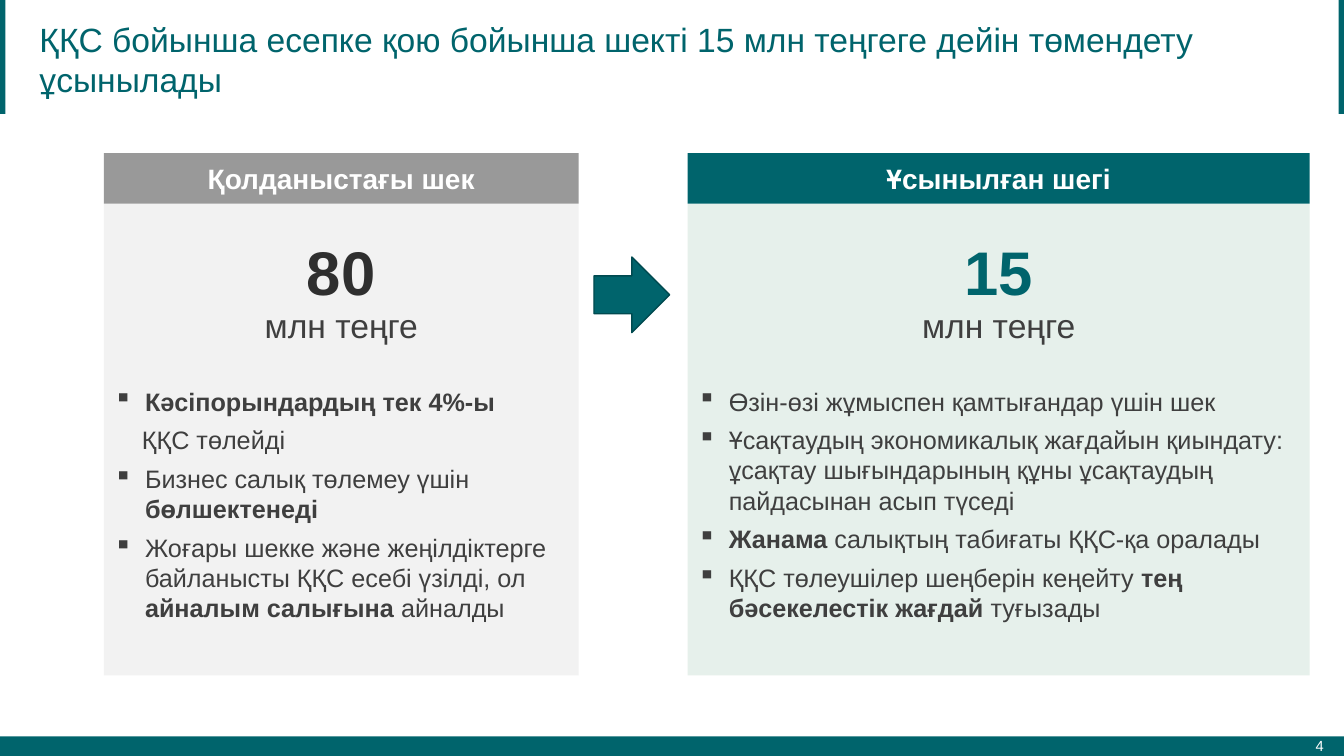
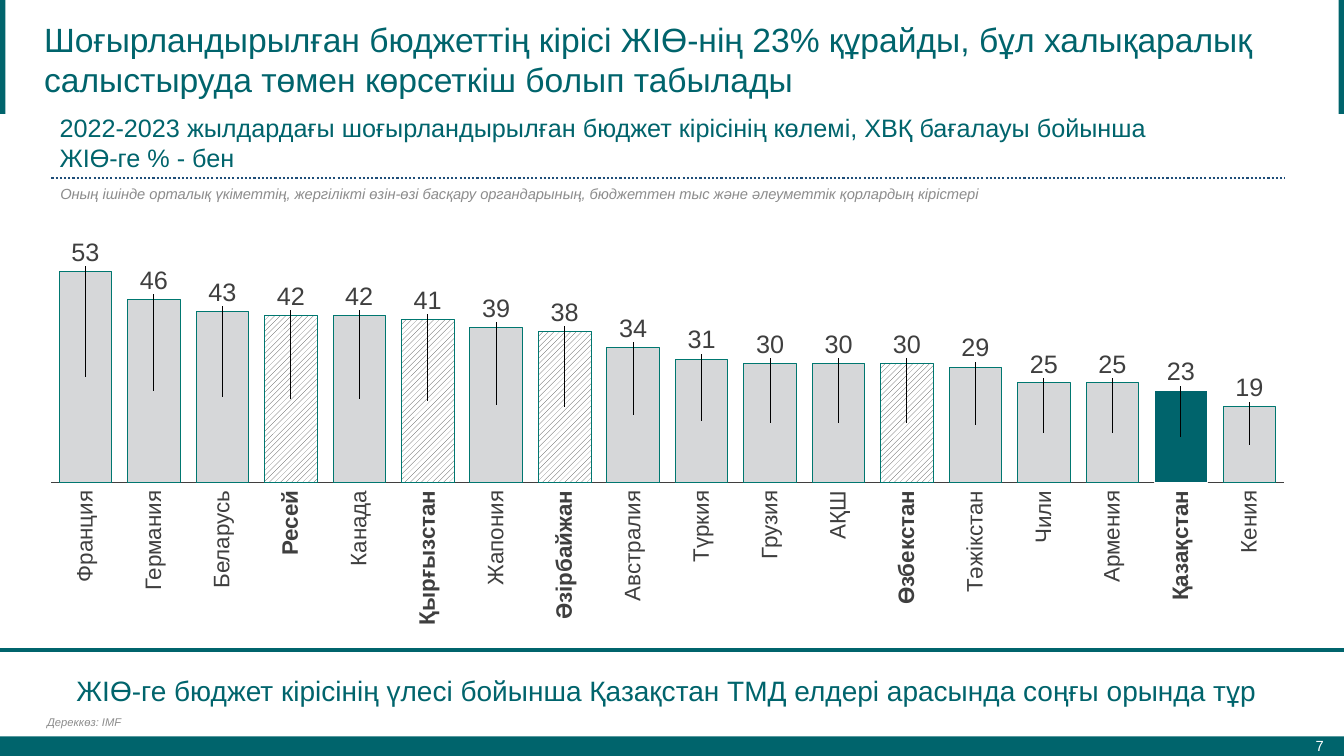
from dataclasses import dataclass

from lxml import etree
from pptx import Presentation
from pptx.chart.data import CategoryChartData
from pptx.dml.color import RGBColor
from pptx.enum.chart import XL_CHART_TYPE, XL_TICK_LABEL_POSITION, XL_TICK_MARK
from pptx.enum.dml import MSO_LINE, MSO_PATTERN
from pptx.enum.shapes import MSO_CONNECTOR, MSO_SHAPE
from pptx.enum.text import MSO_ANCHOR, PP_ALIGN
from pptx.oxml import parse_xml
from pptx.oxml.ns import nsdecls, qn
from pptx.util import Inches, Pt

TEAL = RGBColor(0x00, 0x64, 0x6C)
DARK_TEAL = RGBColor(0x00, 0x4A, 0x50)
BAR_OUTLINE = RGBColor(0x00, 0x77, 0x70)
PALE_GREEN = RGBColor(0xE6, 0xF0, 0xEB)
NAVY = RGBColor(0x1F, 0x4E, 0x79)
INK = RGBColor(0x3F, 0x3F, 0x3F)
BLACK = RGBColor(0x2F, 0x2F, 0x2F)
GREY = RGBColor(0x99, 0x99, 0x99)
NOTE_GREY = RGBColor(0x8C, 0x8C, 0x8C)
BAR_GREY = RGBColor(0xD6, 0xD7, 0xD9)
PALE_GREY = RGBColor(0xF2, 0xF2, 0xF2)
WHITE = RGBColor(0xFF, 0xFF, 0xFF)

FONT = "Arial"
LEFT, CENTER, RIGHT = PP_ALIGN.LEFT, PP_ALIGN.CENTER, PP_ALIGN.RIGHT
TOP, MIDDLE, BOTTOM = MSO_ANCHOR.TOP, MSO_ANCHOR.MIDDLE, MSO_ANCHOR.BOTTOM
RECTANGLE, RIGHT_ARROW = MSO_SHAPE.RECTANGLE, MSO_SHAPE.RIGHT_ARROW
STRAIGHT, DOTTED = MSO_CONNECTOR.STRAIGHT, MSO_LINE.ROUND_DOT
STACKED_COLUMNS = XL_CHART_TYPE.COLUMN_STACKED
NO_TICK_LABELS, NO_TICKS = XL_TICK_LABEL_POSITION.NONE, XL_TICK_MARK.NONE
HATCHING = MSO_PATTERN.WIDE_UPWARD_DIAGONAL
WIDE_MARGINS = (0.1, 0.05)
NO_MARGINS = (0, 0)


@dataclass
class Box:
    """A region in inches; region() takes percentages of it."""
    left: float
    top: float
    width: float
    height: float

    def region(self, left, top, width, height):
        return Box(self.left + self.width * left / 100, self.top + self.height * top / 100,
                   self.width * width / 100, self.height * height / 100)

    def lengths(self):
        return [Inches(value) for value in (self.left, self.top, self.width, self.height)]


PAGE = Box(0, 0, 13.33, 7.5)

# Bullet paragraphs: (bulleted, [(text, bold), ...])
CURRENT_POINTS = [
    (True, [("Кәсіпорындардың тек 4%-ы", True)]),
    (False, [("ҚҚС төлейді", False)]),
    (True, [("Бизнес салық төлемеу үшін ", False), ("бөлшектенеді", True)]),
    (True, [("Жоғары шекке және жеңілдіктерге байланысты ҚҚС есебі үзілді, ол ", False),
            ("айналым салығына ", True), ("айналды", False)]),
]
PROPOSED_POINTS = [
    (True, [("Өзін-өзі жұмыспен қамтығандар үшін шек", False)]),
    (True, [("Ұсақтаудың экономикалық жағдайын қиындату: ұсақтау шығындарының құны "
             "ұсақтаудың пайдасынан асып түседі", False)]),
    (True, [("Жанама ", True), ("салықтың табиғаты ҚҚС-қа оралады", False)]),
    (True, [("ҚҚС төлеушілер шеңберін кеңейту ", False),
            ("тең бәсекелестік жағдай ", True), ("туғызады", False)]),
]

REVENUES = {
    "Франция": 53, "Германия": 46, "Беларусь": 43, "Ресей": 42, "Канада": 42,
    "Қырғызстан": 41, "Жапония": 39, "Әзірбайжан": 38, "Австралия": 34, "Түркия": 31,
    "Грузия": 30, "АҚШ": 30, "Өзбекстан": 30, "Тәжікстан": 29, "Чили": 25,
    "Армения": 25, "Қазақстан": 23, "Кения": 19,
}
HATCHED = {"Ресей", "Қырғызстан", "Әзірбайжан", "Өзбекстан"}
FOCUS = "Қазақстан"
PLOT = {"x": 0.007, "y": 0.191, "w": 0.985, "h": 0.672}
LABEL_LIFT = 0.06


def add_run(paragraph, text, size, color, bold=False, italic=False):
    run = paragraph.add_run()
    run.text = text
    font = run.font
    font.name, font.size, font.bold, font.italic = FONT, Pt(size), bold, italic
    font.color.rgb = color


def set_frame(shape, anchor=TOP, margins=WIDE_MARGINS):
    frame = shape.text_frame
    frame.word_wrap = True
    frame.vertical_anchor = anchor
    frame.margin_left = frame.margin_right = Inches(margins[0])
    frame.margin_top = frame.margin_bottom = Inches(margins[1])
    return frame


def add_text(slide, box, text, size, color, align=LEFT, anchor=TOP,
             margins=WIDE_MARGINS, bold=False, italic=False):
    frame = set_frame(slide.shapes.add_textbox(*box.lengths()), anchor, margins)
    paragraph = frame.paragraphs[0]
    paragraph.alignment = align
    add_run(paragraph, text, size, color, bold, italic)
    return frame


def add_block(slide, box, fill, kind=RECTANGLE, outline=None):
    shape = slide.shapes.add_shape(kind, *box.lengths())
    shape.shadow.inherit = False
    shape.fill.solid()
    shape.fill.fore_color.rgb = fill
    if outline is None:
        shape.line.fill.background()
    else:
        shape.line.color.rgb = outline
        shape.line.width = Pt(1)
    return shape


def add_rule(slide, box, color, width, dash=None):
    """Draw a horizontal line along the top of the box."""
    left, top, length, _ = box.lengths()
    line = slide.shapes.add_connector(STRAIGHT, left, top, left + length, top)
    line.line.color.rgb = color
    line.line.width = Pt(width)
    if dash is not None:
        line.line.dash_style = dash
    etree.SubElement(line.element.spPr, qn("a:effectLst"))


def add_page(presentation, title, number, title_left):
    slide = presentation.slides.add_slide(presentation.slide_layouts[6])
    add_block(slide, PAGE.region(0, 97.4, 100, 2.6), TEAL)
    add_text(slide, PAGE.region(89.4, 96, 9.7, 5.3), number, 10.5, WHITE,
             RIGHT, MIDDLE, (0.08, 0.04))
    for left in (0, 99.6):
        add_block(slide, PAGE.region(left, 0, 0.4, 15.07), TEAL)
    add_text(slide, PAGE.region(title_left, 2.67, 93.2, 10.27), title, 24, TEAL, anchor=MIDDLE)
    return slide


def add_points(slide, box, points):
    frame = set_frame(slide.shapes.add_textbox(*box.lengths()))
    for index, (bulleted, runs) in enumerate(points):
        paragraph = frame.add_paragraph() if index else frame.paragraphs[0]
        properties = paragraph._p.get_or_add_pPr()
        indent = Inches(0.31 if bulleted else 0.28)
        properties.set("marL", str(indent))
        if bulleted:
            properties.set("indent", str(-indent))
            etree.SubElement(properties, qn("a:buChar")).set("char", "▪")
        paragraph.space_after = Pt(6)
        for text, bold in runs:
            add_run(paragraph, text, 18, INK, bold)


def add_card(slide, box, heading, amount, points, head_fill, body_fill, amount_color):
    add_block(slide, box.region(0, 9.65, 100, 90.35), body_fill)
    header = add_block(slide, box.region(0, 0, 100, 9.65), head_fill)
    paragraph = set_frame(header, MIDDLE).paragraphs[0]
    paragraph.alignment = CENTER
    add_run(paragraph, heading, 20, WHITE, bold=True)
    frame = add_text(slide, box.region(0, 16.2, 100, 21.8), amount, 44, amount_color,
                     CENTER, bold=True)
    unit = frame.add_paragraph()
    unit.alignment = CENTER
    add_run(unit, "млн теңге", 24, INK)
    for paragraph in frame.paragraphs:
        paragraph.line_spacing = 0.9
    add_points(slide, box.region(0, 43.6, 100, 47.7), points)


def add_manual_layout(parent, position, values, inner=False):
    target = '<c:layoutTarget val="inner"/>' if inner else ""
    modes = '<c:xMode val="edge"/><c:yMode val="edge"/>' if inner else ""
    sizes = "".join(f'<c:{key} val="{value:.3f}"/>' for key, value in values.items())
    for layout in parent.findall(qn("c:layout")):
        parent.remove(layout)
    parent.insert(position, parse_xml(
        f'<c:layout {nsdecls("c")}><c:manualLayout>{target}{modes}{sizes}'
        '</c:manualLayout></c:layout>'))


def style_bar(point, country):
    fill, line = point.format.fill, point.format.line
    if country in HATCHED:
        fill.patterned()
        fill.pattern = HATCHING
        fill.fore_color.rgb, fill.back_color.rgb = INK, WHITE
    else:
        fill.solid()
        fill.fore_color.rgb = TEAL if country == FOCUS else BAR_GREY
    line.color.rgb = WHITE if country == FOCUS else BAR_OUTLINE
    line.width = Pt(0.5)
    label_font = point.data_label.font
    label_font.name, label_font.size = FONT, Pt(18)
    label_font.color.rgb = INK


def add_revenue_chart(slide, box):
    data = CategoryChartData(number_format="0")
    data.categories = [str(index + 1) for index in range(len(REVENUES))]
    data.add_series("Series 1", REVENUES.values())
    chart = slide.shapes.add_chart(STACKED_COLUMNS, *box.lengths(), data).chart
    chart.has_legend = chart.has_title = False
    chart.font.name, chart.font.size = FONT, Pt(10)
    chart.font.color.rgb = INK

    plot = chart.plots[0]
    plot.gap_width, plot.overlap, plot.vary_by_categories = 30, 100, False
    highest = max(REVENUES.values())
    values = chart.value_axis
    values.minimum_scale, values.maximum_scale = 0, highest
    values.has_major_gridlines = values.visible = False
    categories = chart.category_axis
    categories.tick_label_position = NO_TICK_LABELS
    categories.major_tick_mark = categories.minor_tick_mark = NO_TICKS
    categories.format.line.color.rgb = INK
    categories.format.line.width = Pt(0.75)

    series = plot.series[0]
    series.format.fill.solid()
    series.format.fill.fore_color.rgb = BAR_GREY
    for index, country in enumerate(REVENUES):
        style_bar(series.points[index], country)
    add_manual_layout(chart.element.find(".//" + qn("c:plotArea")), 0, PLOT, inner=True)
    # Each value label is lifted from the middle of its bar to just above it.
    for label, value in zip(chart.element.iter(qn("c:dLbl")), REVENUES.values()):
        lift = value / highest * PLOT["h"] / 2 + LABEL_LIFT
        add_manual_layout(label, 1, {"x": 0, "y": -lift})


def add_country_names(slide, box):
    pitch = 100 * PLOT["w"] / len(REVENUES)
    width = 1.93
    for index, country in enumerate(REVENUES):
        left = 100 * PLOT["x"] + (index + 0.5) * pitch - width / 2
        frame = add_text(slide, box.region(left, 89, width, 47.6), country, 16, INK, RIGHT,
                         MIDDLE, NO_MARGINS, bold=country in HATCHED or country == FOCUS)
        frame.paragraphs[0].line_spacing = 0.9
        frame._txBody.bodyPr.set("vert", "vert270")


def build_threshold_slide(presentation):
    slide = add_page(presentation, "ҚҚС бойынша есепке қою бойынша шекті 15 млн теңгеге дейін "
                     "төмендету ұсынылады", "4", 2.2)
    add_card(slide, PAGE.region(7.73, 20.27, 35.33, 69.07), "Қолданыстағы шек", "80",
             CURRENT_POINTS, GREY, PALE_GREY, BLACK)
    add_block(slide, PAGE.region(44.2, 34, 5.63, 10), TEAL, RIGHT_ARROW, DARK_TEAL)
    add_card(slide, PAGE.region(51.16, 20.27, 46.29, 69.07), "Ұсынылған шегі", "15",
             PROPOSED_POINTS, TEAL, PALE_GREEN, TEAL)


def build_revenue_slide(presentation):
    slide = add_page(presentation, "Шоғырландырылған бюджеттің кірісі ЖІӨ-нің 23% құрайды, бұл "
                     "халықаралық салыстыруда төмен көрсеткіш болып табылады", "7", 2.55)
    add_text(slide, PAGE.region(3.83, 18.27, 85.7, 5.07),
             "2022-2023 жылдардағы шоғырландырылған бюджет кірісінің көлемі, ХВҚ бағалауы "
             "бойынша ЖІӨ-ге % - бен", 18, TEAL, anchor=BOTTOM, margins=(0.08, 0.04))
    add_rule(slide, PAGE.region(3.83, 23.6, 91.75, 0), NAVY, 1.5, DOTTED)
    add_text(slide, PAGE.region(3.75, 23.73, 71.2, 3.73),
             "Оның ішінде орталық үкіметтің, жергілікті өзін-өзі басқару органдарының, "
             "бюджеттен тыс және әлеуметтік қорлардың кірістері", 10.5, NOTE_GREY, italic=True)
    chart_box = PAGE.region(3.15, 28, 93.1, 41.47)
    add_revenue_chart(slide, chart_box)
    add_country_names(slide, chart_box)
    add_rule(slide, PAGE.region(0, 86, 100, 0), TEAL, 3)
    add_text(slide, PAGE.region(0.7, 86.13, 97.8, 10.27),
             "ЖІӨ-ге бюджет кірісінің үлесі бойынша Қазақстан ТМД елдері арасында соңғы "
             "орында тұр", 20, TEAL, CENTER, MIDDLE)
    add_text(slide, PAGE.region(3.5, 94.67, 51.4, 1.73), "Дереккөз: IMF", 8, NOTE_GREY,
             anchor=BOTTOM, margins=NO_MARGINS, italic=True)


def main():
    presentation = Presentation()
    presentation.slide_width, presentation.slide_height = Inches(PAGE.width), Inches(PAGE.height)
    build_threshold_slide(presentation)
    build_revenue_slide(presentation)
    presentation.save("out.pptx")


if __name__ == "__main__":
    main()
